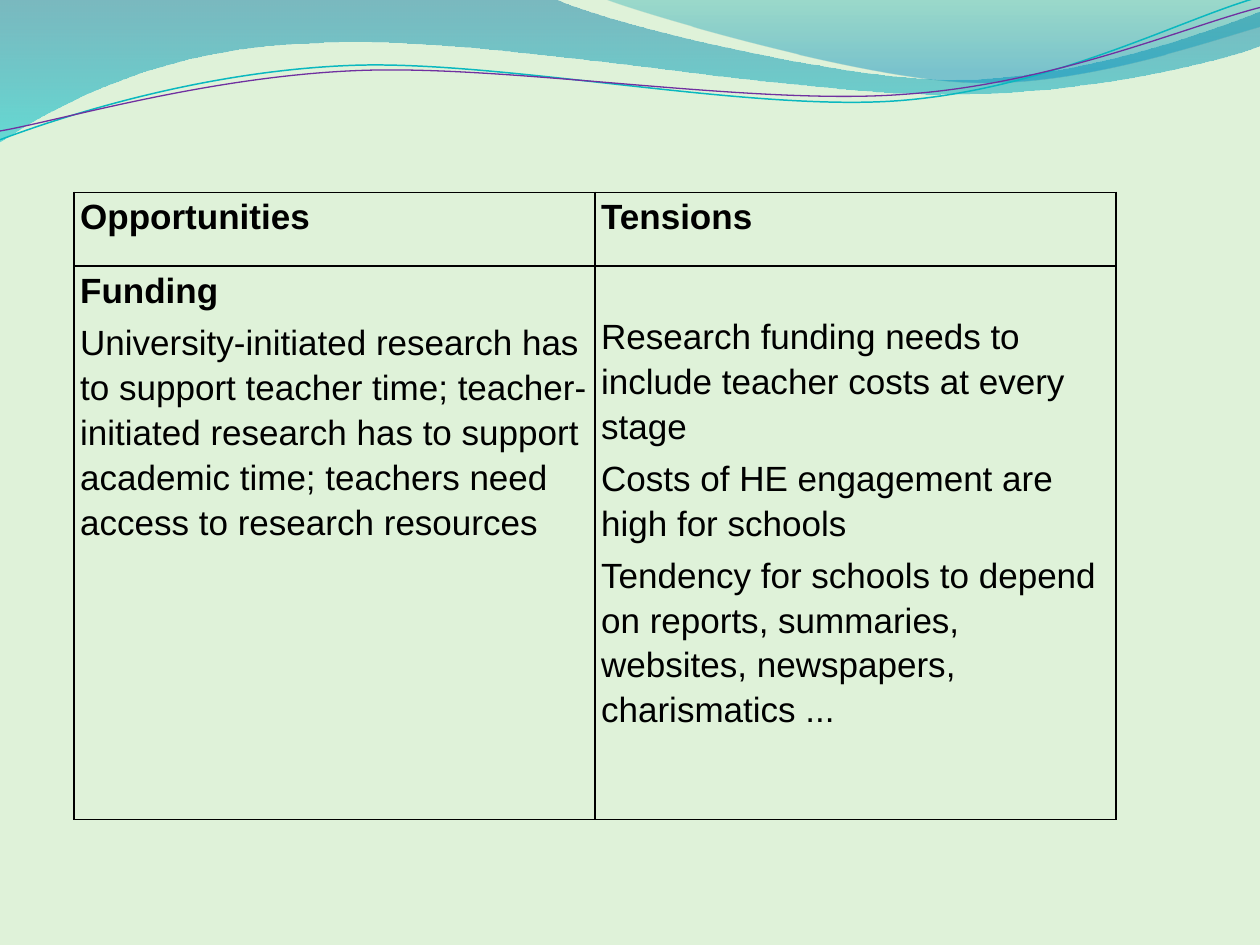
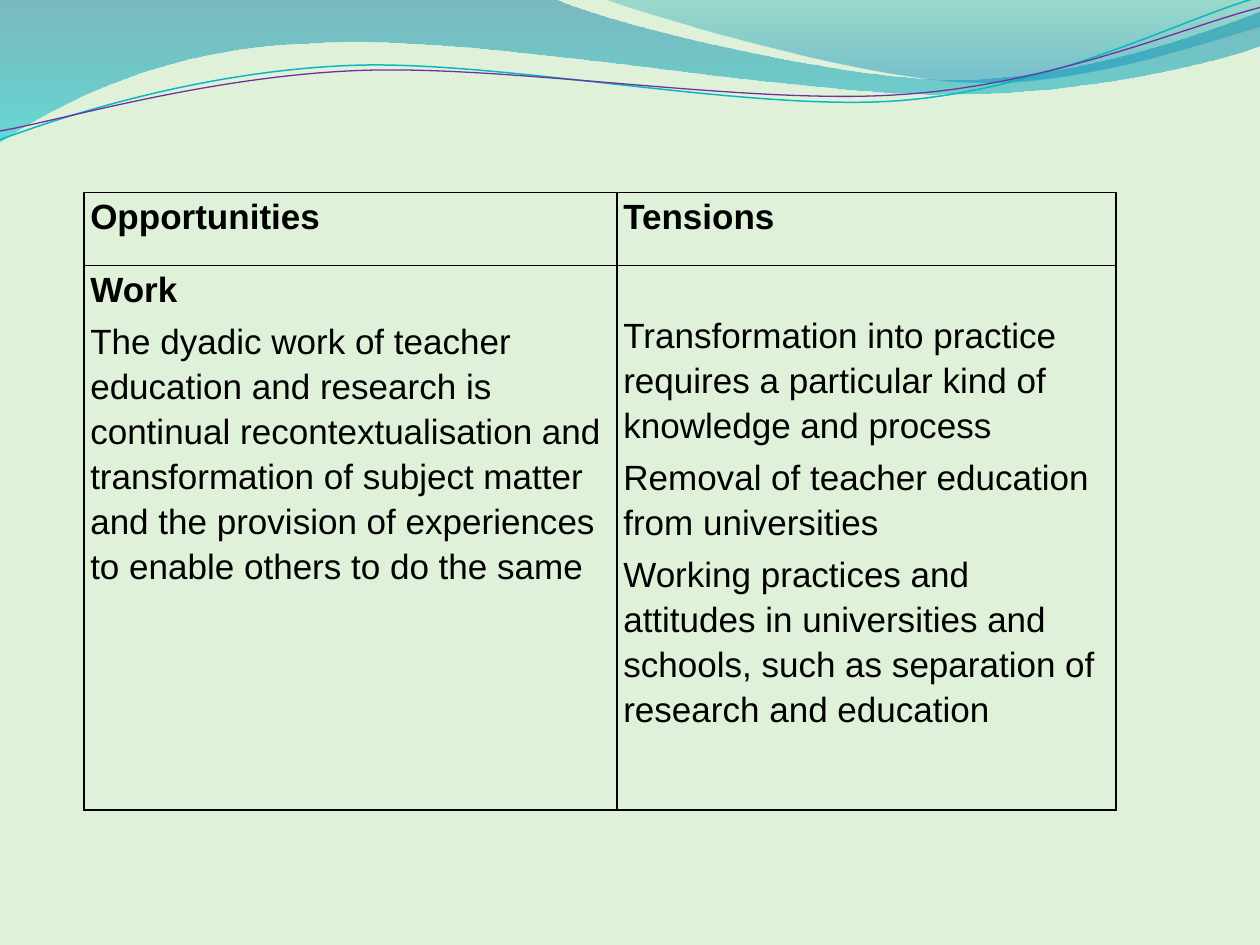
from typing import NamedTuple

from lxml.etree import SubElement
from pptx import Presentation
from pptx.dml.color import RGBColor
from pptx.oxml import parse_xml
from pptx.oxml.ns import nsdecls, qn
from pptx.util import Pt

FONT, FONT_SIZE = "Arial", 20
INK, PAPER = "000000", "DFF2D9"
TABLE_TOP = 109.9
INSET = 3.6
FIRST_LINE_DROP = 26.3  # lowers the tensions below the topic heading
LINE_TILT = 357.3

Point = tuple[float, float]
Segment = tuple[Point, ...]  # one point: straight line; three points: Bézier curve


class Stop(NamedTuple):
    position: float
    color: str
    opacity: int


class Wave(NamedTuple):
    start: Point
    segments: list[Segment]
    stops: tuple[Stop, ...] = ()
    line: str = ""
    width: float = 0


class Topic(NamedTuple):
    name: str
    opportunity: str
    tensions: list[str]
    left: float
    columns: tuple[float, float]
    rows: tuple[float, float]


WAVES = [
    Wave((0, 0), [
        ((316.8, -0.7),),
        ((342.7, 12.2), (478.1, 45.4), (545.8, 45.4)),
        ((614.2, 45.4), (689.8, 18.7), (720, 6.5)),
        ((720.7, 25.9),),
        ((707.8, 31.7), (626.4, 54.7), (537.1, 54)),
        ((447.8, 54), (275, 20.2), (185, 24.5)),
        ((92.9, 25.9), (33.1, 59.8), (-0.7, 81.4)),
        ((0, 0),),
    ], stops=(Stop(0, "0074A1", 45), Stop(1, "00C6CF", 55))),
    Wave((344.9, -0.7), [
        ((366.5, 7.9), (491, 44.6), (553.7, 46.8)),
        ((616.3, 49.7), (691.9, 23), (720, 15.1)),
        ((720, 0),),
        ((344.9, -0.7),),
    ], stops=(Stop(0, "00A1A9", 30), Stop(0.8, "008BBF", 45))),
    Wave((-1.4, 62.9), [
        ((33.7, 51.6), (114, 29.4), (199.8, 29.9)),
        ((284.8, 30.3), (425.8, 67.2), (512.4, 64.8)),
        ((599, 62.4), (676.4, 25.7), (720.2, 15.6)),
    ], line="0AB8BF", width=0.85),
    Wave((-1.2, 57.9), [
        ((32.9, 53.7), (118.3, 32.5), (204, 33)),
        ((290.5, 33.4), (428.9, 63.8), (515.5, 61.3)),
        ((601.4, 59.6), (678.5, 30.1), (721.4, 21.3)),
    ], line="7030A0", width=0.75),
]

TOPICS = [
    Topic(
        "Funding",
        "University-initiated research has to support teacher time; teacher-initiated "
        "research has to support academic time; teachers need access to research resources",
        ["Research funding needs to include teacher costs at every stage",
         "Costs of HE engagement are high for schools",
         "Tendency for schools to depend on reports, summaries, websites, newspapers, "
         "charismatics ..."],
        left=42.2, columns=(297.7, 297.7), rows=(42.2, 316.1)),
    Topic(
        "Work",
        "The dyadic work of teacher education and research is continual "
        "recontextualisation and transformation of subject matter and the provision of "
        "experiences to enable others to do the same",
        ["Transformation into practice requires a particular kind of knowledge and process",
         "Removal of teacher education from universities",
         "Working practices and attitudes in universities and schools, such as separation "
         "of research and education"],
        left=48, columns=(304.6, 285.2), rows=(41.8, 311.3)),
]


def rgb(color: str) -> RGBColor:
    return RGBColor.from_string(color)


def bend(s, segments: list[Segment]) -> None:
    """Merge the three straight steps of each curved segment into one Bézier curve."""
    steps = iter(list(s.element.iter(qn("a:lnTo"))))
    for segment in segments:
        first, *others = [next(steps) for _ in segment]
        if others:
            first.tag = qn("a:cubicBezTo")
        for step in others:
            first.append(step[0])
            step.getparent().remove(step)


def fill_gradient(s, stops: tuple[Stop, ...]) -> None:
    s.fill.gradient()
    s.fill.gradient_angle = 270
    for gs, stop in zip(s.fill.gradient_stops, stops):
        gs.position = stop.position
        gs.color.rgb = rgb(stop.color)
    for clr, stop in zip(s.element.iter(qn("a:srgbClr")), stops):
        SubElement(clr, qn("a:alpha")).set("val", str(stop.opacity * 1000))


def draw_wave(slide, wave: Wave):
    x, y = wave.start
    builder = slide.shapes.build_freeform(Pt(x), Pt(y))
    points = [(Pt(x), Pt(y)) for segment in wave.segments for x, y in segment]
    builder.add_line_segments(points, close=bool(wave.stops))
    s = builder.convert_to_shape()
    bend(s, wave.segments)
    s.shadow.inherit = False
    if wave.stops:
        fill_gradient(s, wave.stops)
        s.line.fill.background()
    else:
        s.rotation = LINE_TILT
        s.fill.background()
        s.line.color.rgb = rgb(wave.line)
        s.line.width = Pt(wave.width)
    return s


def decorate_master(prs, slide) -> None:
    """Draw the waves on a slide, then move them to the master."""
    master = prs.slide_master
    master.background.fill.solid()
    master.background.fill.fore_color.rgb = rgb(PAPER)
    for i, wave in enumerate(WAVES):
        element = draw_wave(slide, wave).element
        element.xpath(".//p:cNvPr")[0].set("id", str(20 + i))
        master.shapes.element.insert(2 + i, element)


def add_borders(cell) -> None:
    tc_pr = cell._tc.get_or_add_tcPr()
    for i, side in enumerate("LRTB"):
        tc_pr.insert(i, parse_xml(
            f'<a:ln{side} {nsdecls("a")} w="{Pt(1)}"><a:solidFill>'
            f'<a:srgbClr val="{INK}"/></a:solidFill></a:ln{side}>'))


def write_cell(cell, lines: list[str], bold_lines: int = 0,
               space_after: float = 0, top: float = 0) -> None:
    cell.margin_left = cell.margin_right = Pt(INSET)
    cell.margin_top, cell.margin_bottom = Pt(top), Pt(0)
    cell.fill.background()
    add_borders(cell)
    tf = cell.text_frame
    tf.text = "\n".join(lines)
    for i, p in enumerate(tf.paragraphs):
        p.line_spacing = 1.15
        p.space_after = Pt(space_after)
        font = p.runs[0].font
        font.name, font.size, font.bold = FONT, Pt(FONT_SIZE), i < bold_lines
        font.color.rgb = rgb(INK)


def add_topic_table(slide, topic: Topic) -> None:
    table = slide.shapes.add_table(
        2, 2, Pt(topic.left), Pt(TABLE_TOP), Pt(sum(topic.columns)), Pt(sum(topic.rows))).table
    table.first_row = table.horz_banding = False
    for column, width in zip(table.columns, topic.columns):
        column.width = Pt(width)
    for row, height in zip(table.rows, topic.rows):
        row.height = Pt(height)
    for i, heading in enumerate(("Opportunities", "Tensions")):
        write_cell(table.cell(0, i), [heading], bold_lines=1)
    write_cell(table.cell(1, 0), [topic.name, topic.opportunity], bold_lines=1, space_after=4)
    write_cell(table.cell(1, 1), topic.tensions, space_after=4, top=FIRST_LINE_DROP)


def main() -> None:
    prs = Presentation()
    prs.slide_width, prs.slide_height = Pt(720), Pt(540)
    blank = prs.slide_layouts[6]
    slides = [prs.slides.add_slide(blank) for _ in TOPICS]
    decorate_master(prs, slides[0])
    for slide, topic in zip(slides, TOPICS):
        add_topic_table(slide, topic)
    prs.save("out.pptx")


if __name__ == "__main__":
    main()
